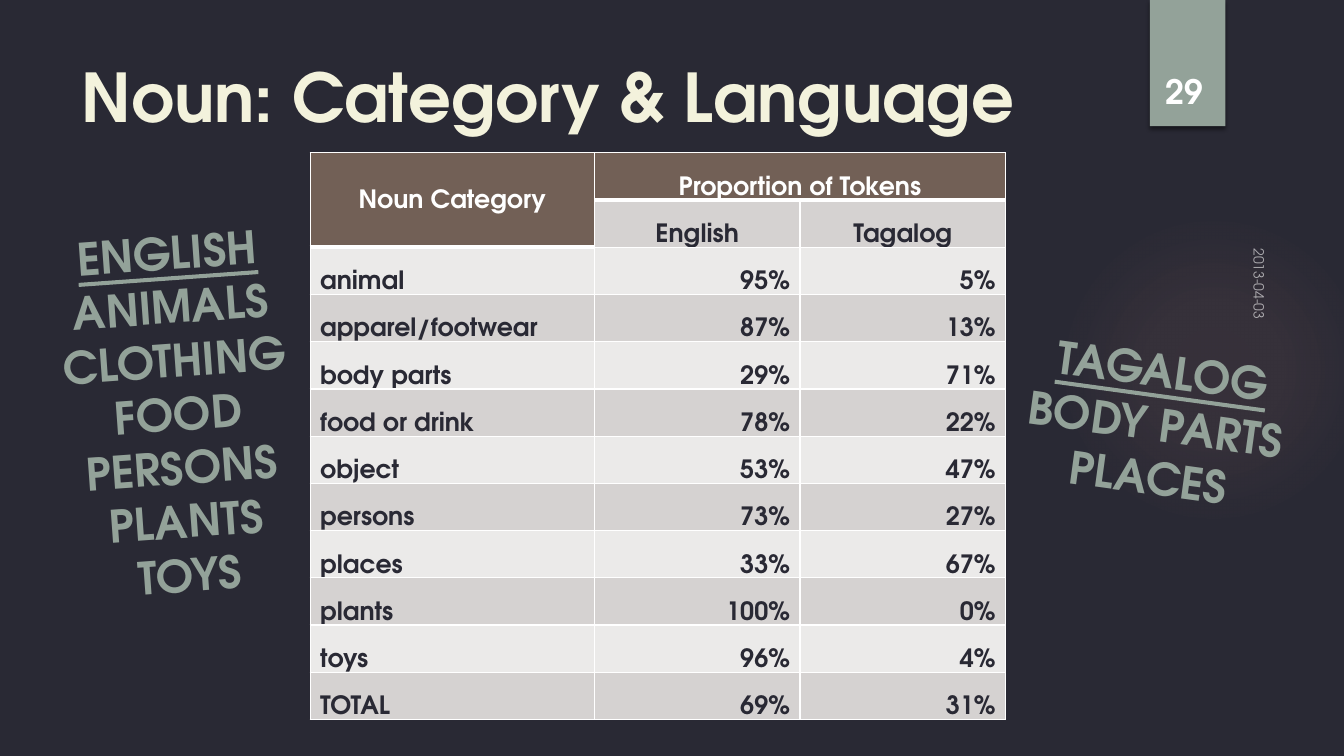
from typing import NamedTuple

from lxml.etree import SubElement
from pptx import Presentation
from pptx.dml.color import RGBColor
from pptx.enum.shapes import MSO_SHAPE
from pptx.enum.text import MSO_ANCHOR, MSO_AUTO_SIZE, PP_ALIGN
from pptx.oxml import parse_xml
from pptx.oxml.ns import nsdecls, qn
from pptx.util import Cm, Pt

FONT = "TeX Gyre Adventor"
COLORS = {
    "background": "292934", "sage": "93A299", "cream": "F3F2DC", "white": "FFFFFF",
    "header": "726056", "light": "EBEAE9", "dark": "D5D2D1", "glow": "E4988A",
    "shadow": "000000",
}
GLOW_STOPS = ((0, 7), (36, 6), (69, 0))  # position and opacity, in percent
COLUMN_WIDTHS = (7.16, 5.18, 5.18)
ROW_HEIGHT = 1.19
HEADER_CELLS = {(0, 0), (1, 0), (0, 1), (0, 2)}


class Box(NamedTuple):
    """Place in centimetres, rotation in degrees."""
    left: float
    top: float
    width: float
    height: float
    rotation: float = 0


class WordList(NamedTuple):
    box: Box
    heading: str
    words: tuple[str, ...]


class Proportion(NamedTuple):
    category: str
    english: int
    tagalog: int


PROPORTIONS = (
    Proportion("animal", 95, 5),
    Proportion("apparel/footwear", 87, 13),
    Proportion("body parts", 29, 71),
    Proportion("food or drink", 78, 22),
    Proportion("object", 53, 47),
    Proportion("persons", 73, 27),
    Proportion("places", 33, 67),
    Proportion("plants", 100, 0),
    Proportion("toys", 96, 4),
    Proportion("TOTAL", 69, 31),
)
WORD_LISTS = (
    WordList(Box(1.37, 5.54, 6.25, 9.83, 355.9), "ENGLISH",
             ("ANIMALS", "CLOTHING", "FOOD", "PERSONS", "PLANTS", "TOYS")),
    WordList(Box(25.55, 8.51, 7.16, 4.37, 7.9), "TAGALOG", ("BODY PARTS", "PLACES")),
)


def rgb(name: str) -> RGBColor:
    return RGBColor.from_string(COLORS[name])


def write(p, text: str, *, size: float, color: str = "white", bold: bool = True,
          underline: bool = False, align=PP_ALIGN.LEFT, spacing=None, opacity: int = 100) -> None:
    p.alignment = align
    if spacing:
        p.line_spacing = spacing
    r = p.add_run()
    r.text = text
    r.font.name, r.font.size, r.font.bold = FONT, Pt(size), bold
    r.font.underline = underline
    r.font.color.rgb = rgb(color)
    if opacity < 100:
        clr = r.font.fill._xPr.find(qn("a:solidFill"))[0]
        SubElement(clr, qn("a:alpha"), val=str(opacity * 1000))


def add_text_frame(s, box: Box, wrap: bool = True, anchor=MSO_ANCHOR.TOP):
    sp = s.shapes.add_textbox(*map(Cm, box[:4]))
    sp.rotation = box.rotation
    tf = sp.text_frame
    tf.word_wrap, tf.vertical_anchor = wrap, anchor
    return tf


def add_plain_shape(s, kind, box: Box):
    sp = s.shapes.add_shape(kind, *map(Cm, box[:4]))
    sp.shadow.inherit = False
    sp.line.fill.background()
    return sp


def add_glow(s) -> None:
    sp = add_plain_shape(s, MSO_SHAPE.OVAL, Box(26.67, 5.41, 7.82, 7.82))
    stops = "".join(
        f'<a:gs pos="{pos * 1000}"><a:srgbClr val="{COLORS["glow"]}">'
        f'<a:alpha val="{opacity * 1000}"/></a:srgbClr></a:gs>'
        for pos, opacity in GLOW_STOPS)
    sp._element.spPr.find(qn("a:prstGeom")).addnext(parse_xml(
        f'<a:gradFill {nsdecls("a")}><a:gsLst>{stops}</a:gsLst><a:path path="circle">'
        '<a:fillToRect l="50000" t="50000" r="50000" b="50000"/></a:path></a:gradFill>'))


def add_page_tab(s) -> None:
    sp = add_plain_shape(s, MSO_SHAPE.RECTANGLE, Box(28.98, 0, 1.9, 3.18))
    sp.fill.solid()
    sp.fill.fore_color.rgb = rgb("sage")
    sp._element.spPr.find(qn("a:effectLst")).append(parse_xml(
        f'<a:outerShdw {nsdecls("a")} blurRad="{Pt(3)}" dist="{Pt(2)}" dir="5400000" '
        f'rotWithShape="0"><a:srgbClr val="{COLORS["shadow"]}"><a:alpha val="45000"/>'
        '</a:srgbClr></a:outerShdw>'))


def set_borders(cell, row: int, col: int) -> None:
    """White edges, thicker where the header ends."""
    in_header = (row, col) in HEADER_CELLS
    below_header = (row - 1, col) in HEADER_CELLS and not in_header
    widths = {"L": 1, "R": 1, "T": 3 if below_header else 1, "B": 3 if in_header else 1}
    tc_pr = cell._tc.get_or_add_tcPr()
    for side, width in widths.items():
        ln = SubElement(tc_pr, qn(f"a:ln{side}"), w=str(Pt(width)))
        fill = SubElement(ln, qn("a:solidFill"))
        SubElement(fill, qn("a:srgbClr"), val=COLORS["white"])


def add_proportion_table(s) -> None:
    rows = [("Noun Category", "Proportion of Tokens", ""), ("", "English", "Tagalog")]
    rows += [(p.category, f"{p.english}%", f"{p.tagalog}%") for p in PROPORTIONS]
    table = s.shapes.add_table(
        len(rows), len(COLUMN_WIDTHS), Cm(7.82), Cm(3.85),
        Cm(sum(COLUMN_WIDTHS)), Cm(ROW_HEIGHT * len(rows))).table
    for column, width in zip(table.columns, COLUMN_WIDTHS):
        column.width = Cm(width)
    for i, texts in enumerate(rows):
        table.rows[i].height = Cm(ROW_HEIGHT)
        for j, text in enumerate(texts):
            cell = table.cell(i, j)
            in_header = (i, j) in HEADER_CELLS
            set_borders(cell, i, j)
            cell.fill.solid()
            cell.fill.fore_color.rgb = rgb(
                "header" if in_header else "dark" if i % 2 else "light")
            cell.margin_left = cell.margin_right = Cm(0.25)
            cell.margin_top = cell.margin_bottom = 0
            cell.vertical_anchor = MSO_ANCHOR.BOTTOM
            if text:
                align = PP_ALIGN.CENTER if i < 2 else PP_ALIGN.RIGHT if j else PP_ALIGN.LEFT
                write(cell.text_frame.paragraphs[0], text, size=18, align=align,
                      spacing=1.15, color="white" if in_header else "background")
    table.cell(0, 0).vertical_anchor = MSO_ANCHOR.MIDDLE
    table.cell(0, 0).merge(table.cell(1, 0))
    table.cell(0, 1).merge(table.cell(0, 2))


def add_word_list(s, word_list: WordList) -> None:
    tf = add_text_frame(s, word_list.box, wrap=False)
    tf.auto_size = MSO_AUTO_SIZE.SHAPE_TO_FIT_TEXT
    style = {"size": 32, "color": "sage", "align": PP_ALIGN.CENTER}
    write(tf.paragraphs[0], word_list.heading, underline=True, **style)
    for word in word_list.words:
        write(tf.add_paragraph(), word, **style)


def main() -> None:
    prs = Presentation()
    prs.slide_width, prs.slide_height = Cm(33.87), Cm(19.05)
    s = prs.slides.add_slide(prs.slide_layouts[6])
    s.background.fill.solid()
    s.background.fill.fore_color.rgb = rgb("background")

    add_glow(s)
    add_page_tab(s)
    title = add_text_frame(s, Box(1.8, 1.27, 26.14, 3.89))
    write(title.paragraphs[0], "Noun: Category & Language", size=48, color="cream")
    add_proportion_table(s)
    date = add_text_frame(s, Box(30.28, 6.96, 2.74, 0.84, 90))
    write(date.paragraphs[0], "2013-04-03", size=10, bold=False, opacity=60)
    number = add_text_frame(s, Box(28.68, 0.81, 2.34, 2.13), anchor=MSO_ANCHOR.BOTTOM)
    write(number.paragraphs[0], "29", size=24, align=PP_ALIGN.CENTER)
    for word_list in WORD_LISTS:
        add_word_list(s, word_list)
    prs.save("out.pptx")


if __name__ == "__main__":
    main()
